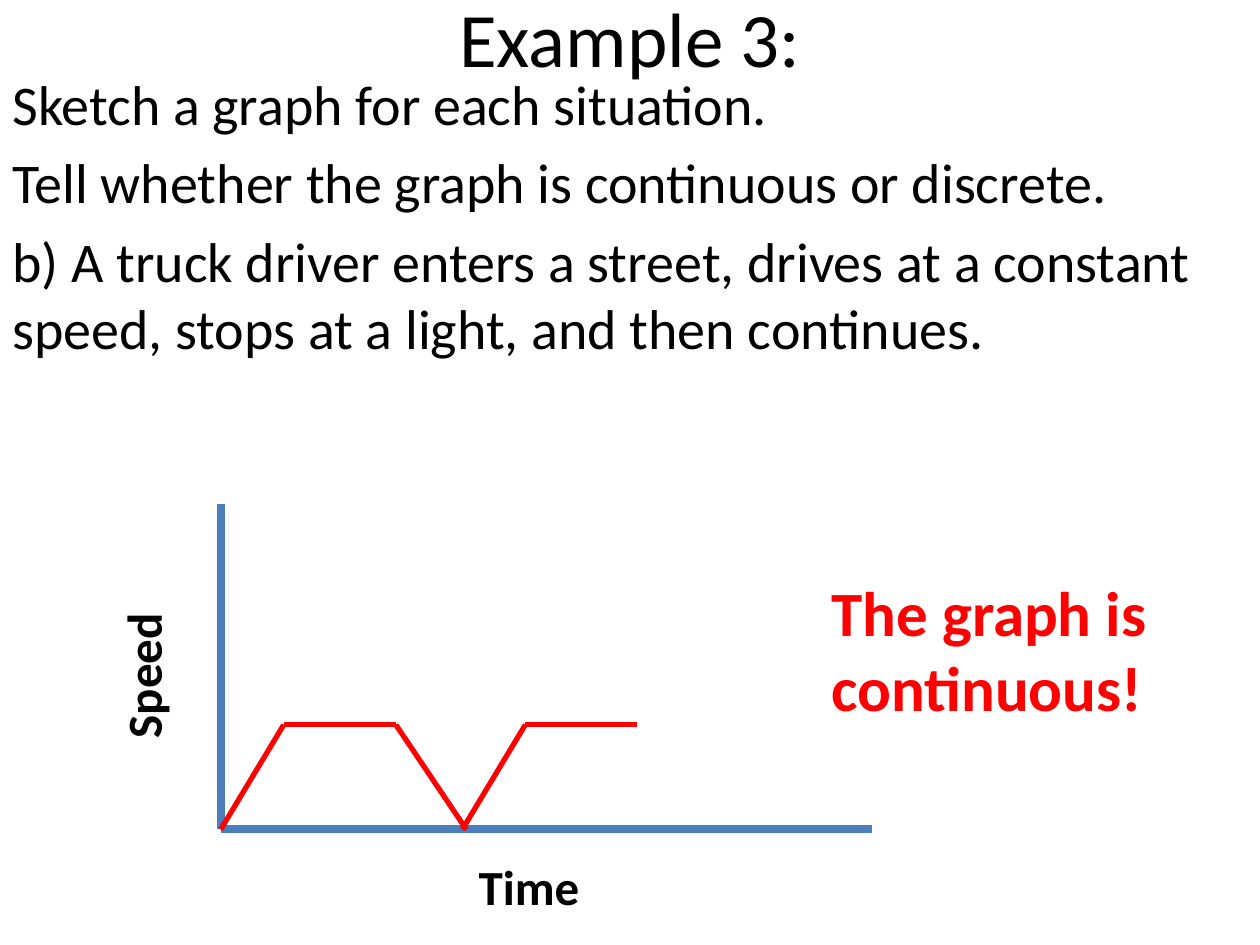
from itertools import pairwise

from lxml.etree import SubElement
from pptx import Presentation
from pptx.dml.color import RGBColor
from pptx.enum.shapes import MSO_CONNECTOR
from pptx.enum.text import MSO_ANCHOR, PP_ALIGN
from pptx.oxml.ns import qn
from pptx.util import Cm, Pt

# Content: boxes are left, top, width, height in cm
COLORS = {"text": "000000", "axis": "4B7EBC", "speed": "FF0000"}
TITLE = "Example 3:"
TASK = [
    "Sketch a graph for each situation.",
    "Tell whether the graph is continuous or discrete.",
    "b) A truck driver enters a street, drives at a constant speed, "
    "stops at a light, and then continues.",
]
TIME_LABEL, SPEED_LABEL = "Time", "Speed"
ANSWER = "The graph is continuous!"

# Graph geometry in cm
ORIGIN_X, ORIGIN_Y = 4.45, 16.72
AXIS_TOP, AXIS_RIGHT = 10.16, 17.57
CRUISE_Y = 14.61
RAMP, CRUISE = 1.27, 2.26  # widths of speeding up and of constant speed
STOP_END, RESTART = 9.4, 9.32

axes = [(ORIGIN_X, AXIS_TOP), (ORIGIN_X, ORIGIN_Y), (AXIS_RIGHT, ORIGIN_Y)]


def drive_from(start):
    """Points of speeding up from rest and then driving at constant speed."""
    return [(start, ORIGIN_Y), (start + RAMP, CRUISE_Y),
            (start + RAMP + CRUISE, CRUISE_Y)]


first_drive = drive_from(ORIGIN_X) + [(STOP_END, ORIGIN_Y)]
second_drive = drive_from(RESTART)

presentation = Presentation()
presentation.slide_width, presentation.slide_height = Cm(25.4), Cm(19.05)
slide = presentation.slides.add_slide(presentation.slide_layouts[6])


def add_text(paragraphs, box, size, color="text", bold=False, wrap=True,
             align=PP_ALIGN.LEFT, anchor=MSO_ANCHOR.TOP, before=0, rotation=0):
    label = slide.shapes.add_textbox(*map(Cm, box))
    label.rotation = rotation
    frame = label.text_frame
    frame.word_wrap = wrap
    frame.vertical_anchor = anchor
    frame.text = "\n".join(paragraphs)
    for paragraph in frame.paragraphs:
        paragraph.alignment = align
        paragraph.space_before = Pt(before)
        font = paragraph.runs[0].font
        font.name, font.size, font.bold = "Calibri", Pt(size), bold
        font.color.rgb = RGBColor.from_string(COLORS[color])


def add_path(points, color, width):
    for start, end in pairwise(points):
        segment = slide.shapes.add_connector(
            MSO_CONNECTOR.STRAIGHT, *map(Cm, start + end))
        segment.line.color.rgb = RGBColor.from_string(COLORS[color])
        segment.line.width = Pt(width)
        SubElement(segment._element.spPr, qn("a:effectLst"))


# Title and task
add_text([TITLE], (1.27, -0.84, 22.86, 3.18), 44,
         align=PP_ALIGN.CENTER, anchor=MSO_ANCHOR.MIDDLE)
add_text(TASK, (0, 1.27, 25.4, 15.11), 32, before=6.4)

# Axes with their labels
add_path(axes, "axis", 4.5)
add_text([TIME_LABEL], (9.4, 17.15, 2.57, 1.45), 28, bold=True, wrap=False)
add_text([SPEED_LABEL], (1.35, 12.88, 3.05, 1.45), 28, bold=True, wrap=False,
         rotation=270)

# Answer
add_text([ANSWER], (16.51, 11.43, 7.42, 3.33), 36, color="speed", bold=True)

# Speed over time
for drive in (first_drive, second_drive):
    add_path(drive, "speed", 3)

presentation.save("out.pptx")
